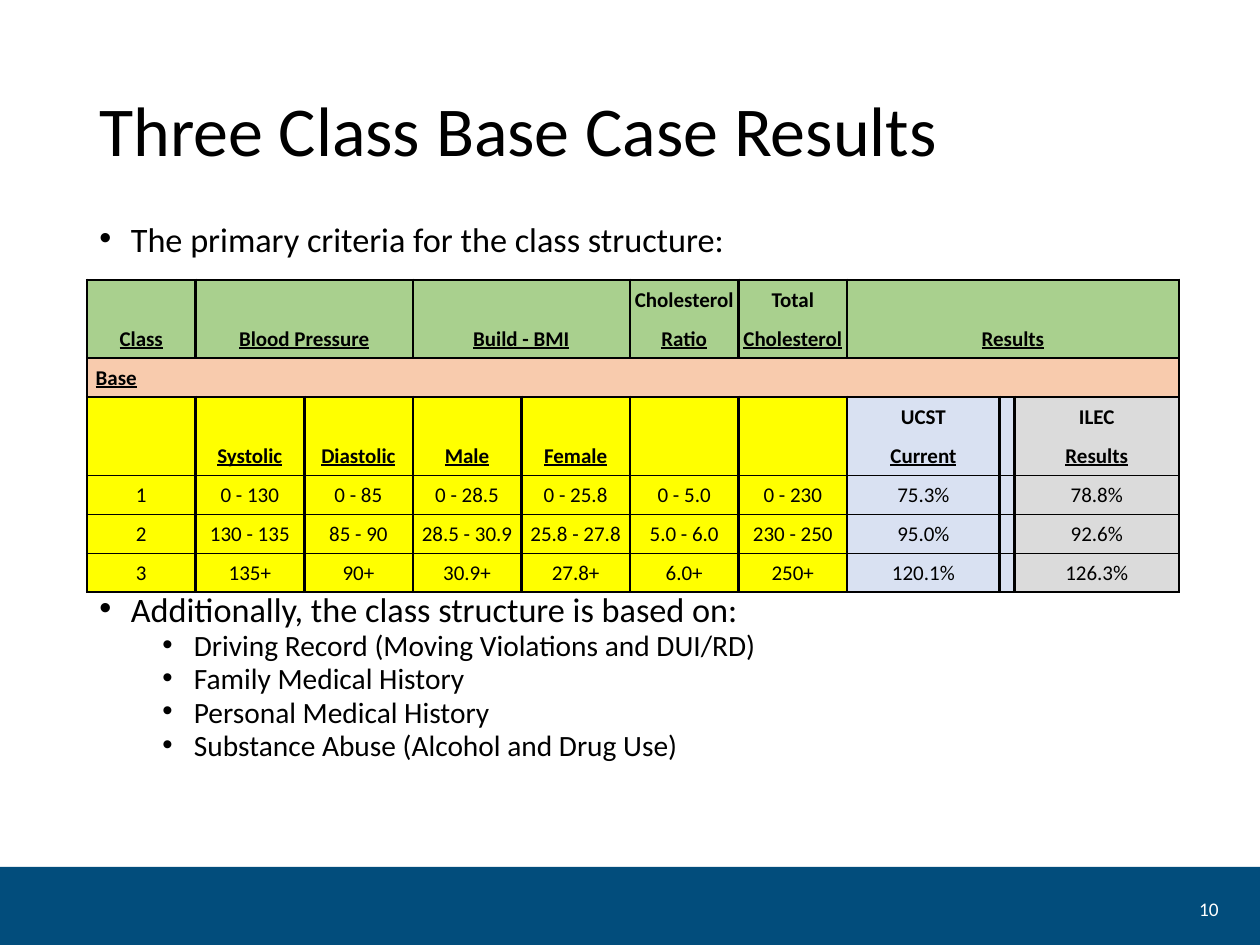
from lxml.etree import SubElement
from pptx import Presentation
from pptx.dml.color import RGBColor
from pptx.enum.shapes import MSO_SHAPE
from pptx.enum.text import MSO_ANCHOR as Anchor, PP_ALIGN as Align
from pptx.oxml.ns import qn
from pptx.util import Inches, Pt

BLACK = RGBColor(0x00, 0x00, 0x00)
WHITE = RGBColor(0xFF, 0xFF, 0xFF)
NAVY = RGBColor(0x02, 0x4D, 0x7C)
GREEN = RGBColor(0xA9, 0xD0, 0x8E)
PEACH = RGBColor(0xF8, 0xCB, 0xAD)
YELLOW = RGBColor(0xFF, 0xFF, 0x00)
PALE_BLUE = RGBColor(0xD9, 0xE1, 0xF2)
GREY = RGBColor(0xDB, 0xDB, 0xDB)

FONT = "Calibri"
MAIN_BULLET = {"indent": 0.25, "size": 19.6, "before": 10}
SUB_BULLET = {"indent": 0.75, "size": 16.8, "before": 5}
BULLETS = [
    ("The primary criteria for the class structure:", MAIN_BULLET | {"before": 0}),
    ("Additionally, the class structure is based on:", MAIN_BULLET | {"before": 195}),
    ("Driving Record (Moving Violations and DUI/RD)", SUB_BULLET),
    ("Family Medical History", SUB_BULLET),
    ("Personal Medical History", SUB_BULLET),
    ("Substance Abuse (Alcohol and Drug Use)", SUB_BULLET),
]

TABLE_WIDTH = Inches(8.62)
ROW_HEIGHT = Inches(0.31)
TEXT_COLUMNS = [0, 1, 2, 3, 4, 5, 6, 7, 10]
ROWS = [
    ["", "", "", "", "", "Cholesterol", "Total", "", ""],
    ["Class", "Blood Pressure", "", "Build - BMI", "", "Ratio", "Cholesterol", "Results", ""],
    ["Base", "", "", "", "", "", "", "", ""],
    ["", "", "", "", "", "", "", "UCST", "ILEC"],
    ["", "Systolic", "Diastolic", "Male", "Female", "", "", "Current", "Results"],
    ["1", "0 - 130", "0 - 85", "0 - 28.5", "0 - 25.8", "0 - 5.0", "0 - 230", "75.3%", "78.8%"],
    ["2", "130 - 135", "85 - 90", "28.5 - 30.9", "25.8 - 27.8", "5.0 - 6.0", "230 - 250", "95.0%", "92.6%"],
    ["3", "135+", "90+", "30.9+", "27.8+", "6.0+", "250+", "120.1%", "126.3%"],
]
BASE_ROW = 2
UNDERLINED_ROWS = (1, 2, 4)
FIRST_DATA_ROW = 5
HEADER_MERGES = {0: [(8, 10)], 1: [(1, 2), (3, 4), (7, 11)]}
RESULT_MERGES = [(7, 8), (10, 11)]

ROW_EDGES = {0: 1.5, 2: 1.5, 3: 1.5, 5: 0.5, 6: 0.5, 7: 0.5, 8: 1.5}
BASE_EDGES = {0: 1.5, 12: 1.5}
HEADER_EDGES = BASE_EDGES | dict.fromkeys((1, 3, 5, 6, 7), 1.5)
BODY_EDGES = HEADER_EDGES | dict.fromkeys((2, 4, 9, 10), 2)


def set_format(target, values):
    """Set each named attribute of the target."""
    for name, value in values.items():
        setattr(target, name, value)


def add_run(paragraph, text, color=BLACK, **font_values):
    """Add a run in the slide font."""
    run = paragraph.add_run()
    run.text = text
    set_format(run.font, {"name": FONT} | font_values)
    run.font.color.rgb = color


def add_text_frame(slide, left, top, width, height, anchor):
    """Add a wrapping text box and return its text frame."""
    box = slide.shapes.add_textbox(Inches(left), Inches(top), Inches(width), Inches(height))
    set_format(box.text_frame, {"word_wrap": True, "vertical_anchor": anchor})
    return box.text_frame


def add_band(slide):
    """Add the footer band."""
    band = slide.shapes.add_shape(MSO_SHAPE.RECTANGLE, 0, Inches(6.88), Inches(10), Inches(0.65))
    band.shadow.inherit = False
    band.fill.solid()
    band.fill.fore_color.rgb = NAVY
    band.line.fill.background()


def add_title(slide, text):
    """Add the slide title."""
    paragraph = add_text_frame(slide, 0.69, 0.36, 8.62, 1.4, Anchor.MIDDLE).paragraphs[0]
    paragraph.line_spacing = 0.9
    add_run(paragraph, text, size=Pt(40))


def add_slide_number(slide, text):
    """Add the page number on the band."""
    paragraph = add_text_frame(slide, 9.24, 7.1, 0.53, 0.22, Anchor.MIDDLE).paragraphs[0]
    paragraph.alignment = Align.RIGHT
    add_run(paragraph, text, WHITE, size=Pt(11))


def add_bullets(slide):
    """Add the bullet list that runs above and below the table."""
    frame = add_text_frame(slide, 0.69, 1.77, 8.62, 4.61, Anchor.TOP)
    for index, (text, style) in enumerate(BULLETS):
        paragraph = frame.add_paragraph() if index else frame.paragraphs[0]
        set_format(paragraph, {
            "line_spacing": 0.7,
            "space_before": Pt(style["before"]),
            "level": int(style["indent"] > MAIN_BULLET["indent"]),
        })
        properties = paragraph._p.get_or_add_pPr()
        properties.set("marL", str(Inches(style["indent"])))
        properties.set("indent", str(-Inches(0.25)))
        SubElement(properties, qn("a:buFont"), typeface="Arial")
        SubElement(properties, qn("a:buChar"), char="•")
        add_run(paragraph, text, size=Pt(style["size"]))


def add_border(cell, side, width):
    """Add one cell border, or clear it when there is no width."""
    properties = cell._tc.get_or_add_tcPr()
    line = SubElement(properties, qn(f"a:ln{side}"), w=str(Pt(width or 0)))
    if width:
        fill = SubElement(line, qn("a:solidFill"))
        SubElement(fill, qn("a:srgbClr"), val=str(BLACK))
    else:
        SubElement(line, qn("a:noFill"))


def cell_color(row, column):
    """Return the fill for a table position."""
    if row <= BASE_ROW:
        return PEACH if row == BASE_ROW else GREEN
    if column < 7:
        return YELLOW
    return PALE_BLUE if column < 10 else GREY


def format_cell(cell, row, column):
    """Set the margins, borders and fill of a cell."""
    set_format(cell, {
        "vertical_anchor": Anchor.MIDDLE,
        "margin_left": Inches(0.07 if row == BASE_ROW else 0.01),
        "margin_right": Inches(0.01),
        "margin_top": Inches(0.01),
        "margin_bottom": 0,
    })
    edges = HEADER_EDGES if row < BASE_ROW else BASE_EDGES if row == BASE_ROW else BODY_EDGES
    span = cell.span_width if cell.is_merge_origin else 1
    add_border(cell, "L", edges.get(column))
    add_border(cell, "R", edges.get(column + span))
    add_border(cell, "T", ROW_EDGES.get(row))
    add_border(cell, "B", ROW_EDGES.get(row + 1))
    cell.fill.solid()
    cell.fill.fore_color.rgb = cell_color(row, column)


def fill_cell(cell, row, text):
    """Write the cell text, or set the size of an empty cell."""
    paragraph = cell.text_frame.paragraphs[0]
    if not text:
        SubElement(paragraph._p, qn("a:endParaRPr"), sz="1200")
        return
    paragraph.alignment = Align.LEFT if row == BASE_ROW else Align.CENTER
    add_run(paragraph, text, size=Pt(12), bold=row < FIRST_DATA_ROW, underline=row in UNDERLINED_ROWS)


def add_criteria_table(slide):
    """Add the table of class criteria and results."""
    column_width = TABLE_WIDTH // 10
    widths = [column_width] * 8 + [Inches(0.35), Inches(0.07), Inches(0.44), column_width]
    table = slide.shapes.add_table(
        len(ROWS), len(widths), Inches(0.69), Inches(2.22), TABLE_WIDTH, ROW_HEIGHT * len(ROWS)
    ).table
    set_format(table, {"first_row": False, "horz_banding": False})
    for column, width in zip(table.columns, widths):
        column.width = width
    for row, texts in enumerate(ROWS):
        table.rows[row].height = ROW_HEIGHT
        for first, last in HEADER_MERGES.get(row, RESULT_MERGES):
            table.cell(row, first).merge(table.cell(row, last))
        row_texts = dict(zip(TEXT_COLUMNS, texts))
        for column in range(len(widths)):
            cell = table.cell(row, column)
            format_cell(cell, row, column)
            fill_cell(cell, row, row_texts.get(column))


def main():
    """Build and save the slide."""
    presentation = Presentation()
    set_format(presentation, {"slide_width": Inches(10), "slide_height": Inches(7.5)})
    slide = presentation.slides.add_slide(presentation.slide_layouts[6])
    add_band(slide)
    add_title(slide, "Three Class Base Case Results")
    add_slide_number(slide, "10")
    add_bullets(slide)
    add_criteria_table(slide)
    presentation.save("out.pptx")


if __name__ == "__main__":
    main()
